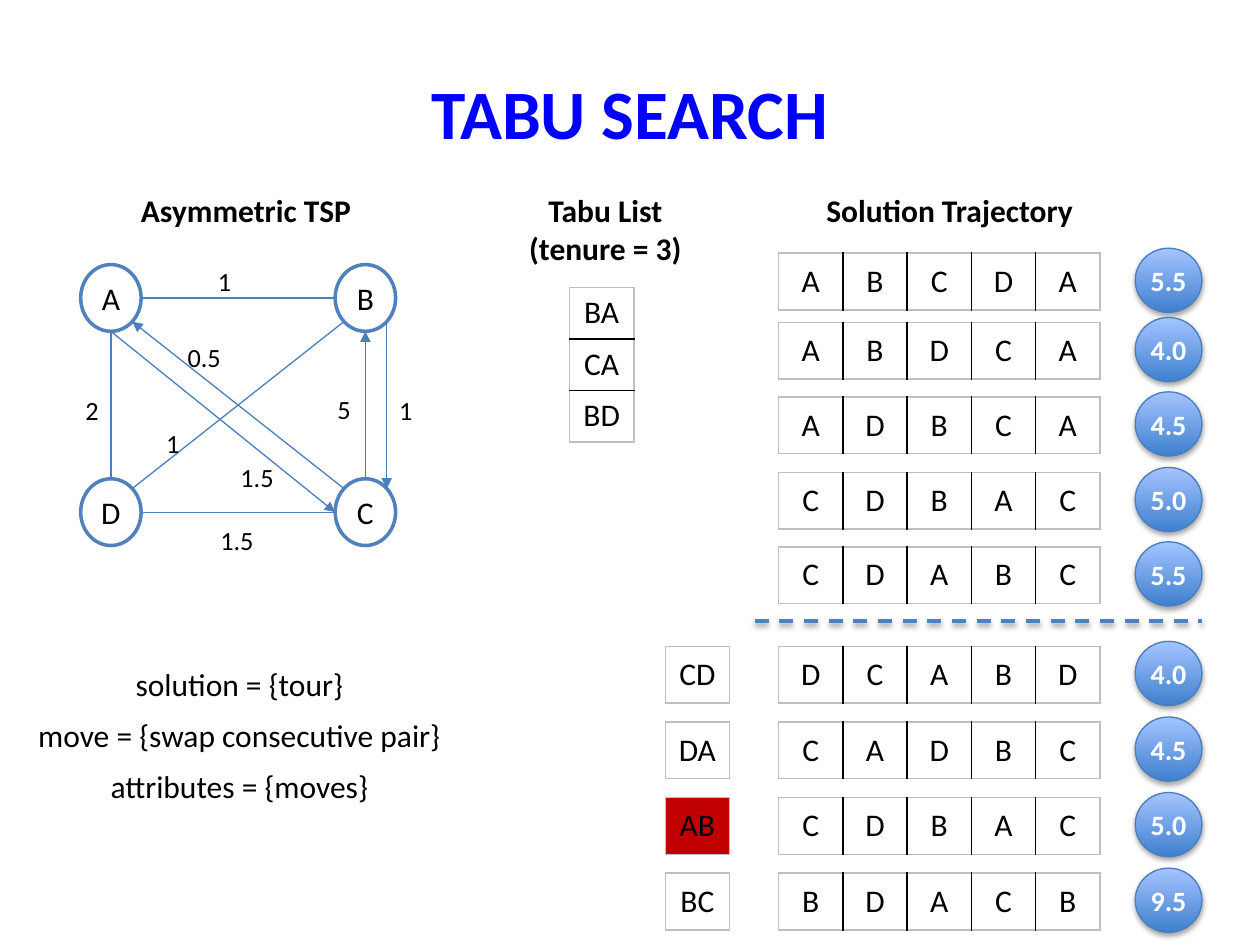
"""Build the tabu search slide."""
import math

import lxml.etree
import pptx
import pptx.dml.color
import pptx.enum.dml
import pptx.enum.shapes
import pptx.enum.text
import pptx.oxml
import pptx.oxml.ns
import pptx.util

Inches = pptx.util.Inches
Pt = pptx.util.Pt
CENTER = pptx.enum.text.PP_ALIGN.CENTER
LEFT = pptx.enum.text.PP_ALIGN.LEFT
MIDDLE = pptx.enum.text.MSO_ANCHOR.MIDDLE
TOP = pptx.enum.text.MSO_ANCHOR.TOP
OVAL = pptx.enum.shapes.MSO_SHAPE.OVAL
STRAIGHT = pptx.enum.shapes.MSO_CONNECTOR.STRAIGHT
BLUE, EDGE_BLUE, BLACK, WHITE = "4F81BD", "4B7EBC", "000000", "FFFFFF"
GRID_GRAY = "BFBFBF"
CELL_W, ROW_H = 0.51, 0.45


def rgb(value):
    """Turn a hex string into a colour."""
    return pptx.dml.color.RGBColor.from_string(value)


def add_xml(parent, tag, **attributes):
    """Append a DrawingML element and return it."""
    return lxml.etree.SubElement(parent, pptx.oxml.ns.qn(tag), attributes)


def write(tf, text, size=18, color=BLACK, bold=False, align=CENTER, gap=0):
    """Fill a text frame with one paragraph per line of text."""
    for i, line in enumerate(text.split("\n")):
        p = tf.paragraphs[0] if i == 0 else tf.add_paragraph()
        p.text = line
        p.alignment = align
        p.space_after = Pt(gap)
        p.font.name = "Calibri"
        p.font.size = Pt(size)
        p.font.bold = bold
        p.font.color.rgb = rgb(color)


def add_text(s, box, text, anchor=TOP, **style):
    """Add a wrapping text box."""
    tf = s.shapes.add_textbox(*map(Inches, box)).text_frame
    tf.word_wrap = True
    tf.vertical_anchor = anchor
    write(tf, text, **style)


def add_shadow(shape, alpha, distance):
    """Give a shape or connector a soft shadow below it."""
    effects = add_xml(shape._element.spPr, "a:effectLst")
    shadow = add_xml(effects, "a:outerShdw", blurRad=str(Pt(3.1)), dist=str(Pt(distance)),
                     dir="5400000", rotWithShape="0")
    add_xml(add_xml(shadow, "a:srgbClr", val=BLACK), "a:alpha", val=str(alpha * 1000))


def add_oval(s, box, text, line, width, **style):
    """Add an outlined oval with a centred label."""
    sp = s.shapes.add_shape(OVAL, *map(Inches, box))
    sp.line.color.rgb = rgb(line)
    sp.line.width = Pt(width)
    tf = sp.text_frame
    tf.word_wrap = False
    tf.vertical_anchor = MIDDLE
    tf.margin_left = tf.margin_right = tf.margin_top = tf.margin_bottom = 0
    write(tf, text, **style)
    return sp


def add_line(s, start, end, color, width):
    """Add a straight line between two points."""
    line = s.shapes.add_connector(STRAIGHT, *map(Inches, (*start, *end)))
    line.line.color.rgb = rgb(color)
    line.line.width = Pt(width)
    return line


def add_border(cell, side, color):
    """Draw one side of a table cell."""
    line = add_xml(cell._tc.get_or_add_tcPr(), "a:" + side, w=str(Pt(1)))
    add_xml(add_xml(line, "a:solidFill"), "a:srgbClr", val=color)


def add_grid(s, left, top, rows, row_h=ROW_H, anchor=MIDDLE, fill=None):
    """Add a table with black inner rules and a gray frame."""
    n_rows, n_cols = len(rows), len(rows[0])
    frame = s.shapes.add_table(n_rows, n_cols, Inches(left), Inches(top),
                               Inches(CELL_W * n_cols), Inches(row_h * n_rows))
    table = frame.table
    table.first_row = table.horz_banding = False
    for column in table.columns:
        column.width = Inches(CELL_W)
    for i, row in enumerate(rows):
        for j, text in enumerate(row):
            cell = table.cell(i, j)
            cell.vertical_anchor = anchor
            write(cell.text_frame, text)
            outer = {"lnL": j == 0, "lnR": j == n_cols - 1,
                     "lnT": i == 0, "lnB": i == n_rows - 1}
            for side, is_outer in outer.items():
                add_border(cell, side, GRID_GRAY if is_outer else BLACK)
            if fill:
                cell.fill.solid()
                cell.fill.fore_color.rgb = rgb(fill)
            else:
                cell.fill.background()


def add_graph(s, left, top):
    """Draw the four-city graph with its edge costs."""
    width, height = 0.48, 0.53
    corners = {"A": (left, top), "B": (left + 2.02, top),
               "D": (left, top + 1.7), "C": (left + 2.02, top + 1.7)}

    def rim(node, angle):
        """Return the point on a city's rim, clockwise from the right."""
        x, y = corners[node]
        turn = math.radians(angle)
        return (x + width / 2 * (1 + math.cos(turn)),
                y + height / 2 * (1 + math.sin(turn)))

    for name, corner in corners.items():
        sp = add_oval(s, (*corner, width, height), name, BLUE, 2)
        sp.shadow.inherit = False
        sp.fill.solid()
        sp.fill.fore_color.rgb = rgb(WHITE)
    edges = [("A", 90, "C", 180, True), ("C", 225, "A", 45, True),
             ("A", 90, "D", 270, False), ("D", 0, "C", 180, False),
             ("B", 135, "D", 315, False), ("A", 0, "B", 180, False),
             ("B", 45, "C", 315, True), ("C", 270, "B", 90, True)]
    for start, start_angle, end, end_angle, directed in edges:
        line = add_line(s, rim(start, start_angle), rim(end, end_angle), EDGE_BLUE, 0.75)
        add_xml(line._element.spPr, "a:effectLst")
        if directed:
            add_xml(line.line._get_or_add_ln(), "a:tailEnd", type="triangle")
    costs = [("1", 0.99, -0.04), ("1", 0.58, 1.24), ("1", 2.43, 0.98), ("2", -0.06, 0.98),
             ("1.5", 1.01, 2.01), ("5", 1.94, 0.97), ("0.5", 0.75, 0.56), ("1.5", 1.17, 1.51)]
    for cost, dx, dy in costs:
        box = (left + dx, top + dy, 0.29 if len(cost) == 1 else 0.5, 0.35)
        add_text(s, box, cost, size=15, align=LEFT)


def add_tour(s, left, top, tour, cost):
    """Place a tour beside its cost badge."""
    add_grid(s, left, top, [tour])
    badge = add_oval(s, (left + 2.83, top - 0.04, 0.53, 0.51), cost, EDGE_BLUE, 0.75,
                     size=16, color=WHITE, bold=True)
    badge.fill.gradient()
    badge.fill.gradient_angle = 90
    for stop, color, position in zip(badge.fill.gradient_stops, ("3F80CE", "A4C4FF"), (0, 1)):
        stop.color.rgb = rgb(color)
        stop.position = position
    add_shadow(badge, 35, 1.8)


def add_trajectory(s, left, top):
    """Place the visited tours, the divider and the candidate moves."""
    visited = [("ABCDA", "5.5", 0), ("ABDCA", "4.0", 0.55), ("ADBCA", "4.5", 1.14),
               ("CDBAC", "5.0", 1.74), ("CDABC", "5.5", 2.33)]
    for tour, cost, dy in visited:
        add_tour(s, left, top + dy, tour, cost)
    divider = add_line(s, (left - 0.19, top + 2.92), (left + 3.36, top + 2.92), BLUE, 2)
    divider.line.dash_style = pptx.enum.dml.MSO_LINE.DASH
    add_shadow(divider, 38, 1.6)
    candidates = [("CD", "DCABD", "4.0"), ("DA", "CADBC", "4.5"),
                  ("AB", "CDBAC", "5.0"), ("BC", "BDACB", "9.5")]
    for i, (move, tour, cost) in enumerate(candidates):
        y = top + 3.12 + 0.6 * i
        add_grid(s, left - 0.9, y, [[move]], fill="C00000" if move == "AB" else None)
        add_tour(s, left, y, tour, cost)


def main():
    """Build and save the slide."""
    prs = pptx.Presentation()
    prs.slide_width, prs.slide_height = Inches(10), Inches(7.5)
    s = prs.slides.add_slide(prs.slide_layouts[6])
    add_text(s, (0.5, 0.5, 9, 0.78), "TABU SEARCH", MIDDLE, size=39.6, color="0000FF", bold=True)
    add_text(s, (1.02, 1.47, 2.02, 0.4), "Asymmetric TSP", bold=True, align=LEFT)
    add_text(s, (4.08, 1.47, 1.45, 0.71), "Tabu List\n(tenure = 3)", bold=True)
    add_text(s, (6.46, 1.47, 2.27, 0.4), "Solution Trajectory", bold=True, align=LEFT)
    add_graph(s, 0.64, 2.1)
    add_text(s, (0.1, 5.23, 3.6, 1.22),
             "solution = {tour}\nmove = {swap consecutive pair}\nattributes = {moves}", gap=7.5)
    add_grid(s, 4.52, 2.28, [["BA"], ["CA"], ["BD"]], row_h=0.41, anchor=TOP)
    add_trajectory(s, 6.18, 2.01)
    prs.save("out.pptx")


if __name__ == "__main__":
    main()
